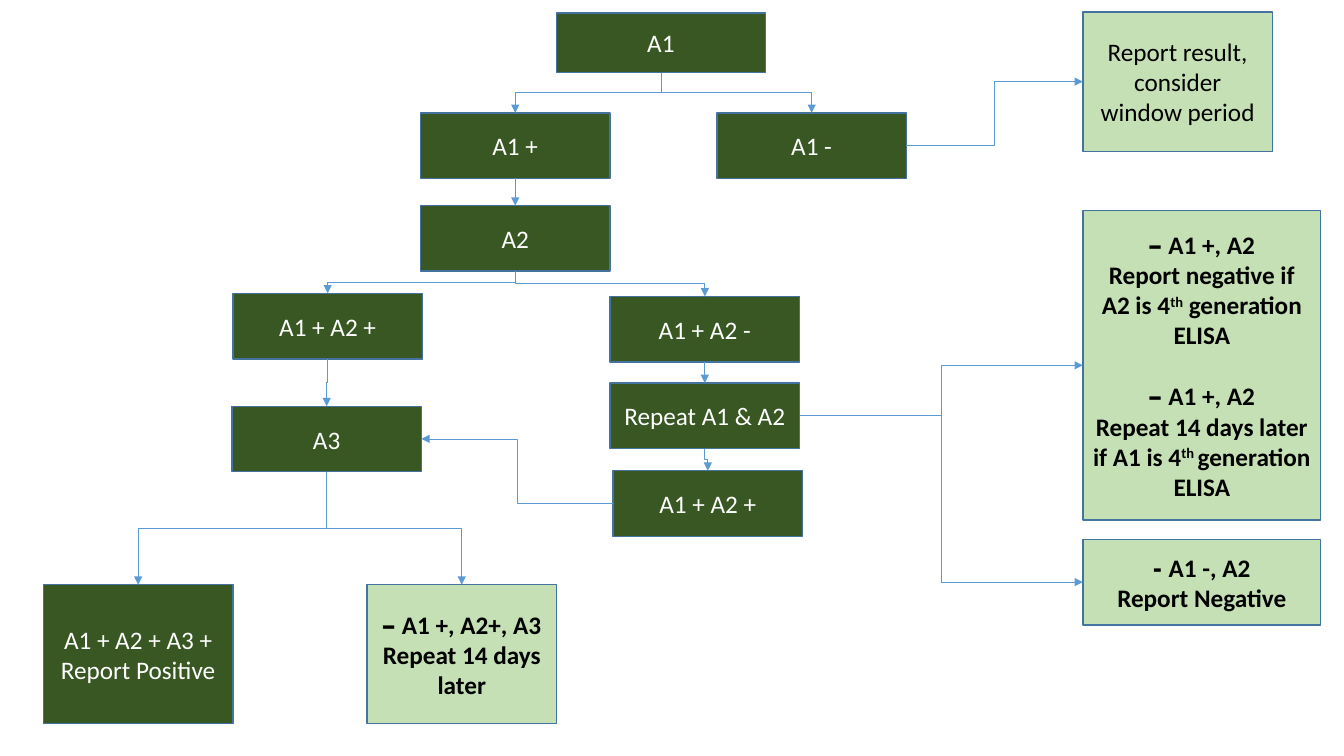
from pptx import Presentation
from pptx.dml.color import RGBColor
from pptx.enum.shapes import MSO_CONNECTOR, MSO_SHAPE
from pptx.enum.text import MSO_ANCHOR, PP_ALIGN
from pptx.oxml.ns import qn
from pptx.oxml.xmlchemy import OxmlElement
from pptx.util import Inches, Pt

PROCESS = MSO_SHAPE.FLOWCHART_PROCESS
ELBOW = MSO_CONNECTOR.ELBOW
MIDDLE = MSO_ANCHOR.MIDDLE
CENTER = PP_ALIGN.CENTER
TOP, LEFT, BOTTOM, RIGHT = range(4)  # connection sites of a box

COLORS = {
    "dark": "385723",
    "light": "C5E0B4",
    "outline": "43739E",
    "arrow": "5B9BD5",
    "white": "FFFFFF",
    "black": "000000",
}
STYLES = {
    "step": {"fill": "dark", "text": "white", "bold": False, "rtl": False},
    "advice": {"fill": "light", "text": "black", "bold": False, "rtl": False},
    "verdict": {"fill": "light", "text": "black", "bold": True, "rtl": True},
}
WIDTH, HEIGHT, TALL = 1.88, 0.65, 1.38
WIDE = 2.36
OUTCOME_LEFT = 10.74


def add_box(slide, left, top, width, height, style, paragraphs):
    """Add a process box; text between ^ marks is superscript."""
    look = STYLES[style]
    box = slide.shapes.add_shape(
        PROCESS, Inches(left), Inches(top), Inches(width), Inches(height))
    box.shadow.inherit = False
    box.fill.solid()
    box.fill.fore_color.rgb = RGBColor.from_string(COLORS[look["fill"]])
    box.line.color.rgb = RGBColor.from_string(COLORS["outline"])
    box.line.width = Pt(1)
    frame = box.text_frame
    frame.word_wrap = True
    frame.vertical_anchor = MIDDLE
    font_format = {"name": "Calibri", "size": Pt(18), "bold": look["bold"]}
    for index, text in enumerate(paragraphs):
        paragraph = frame.add_paragraph() if index else frame.paragraphs[0]
        paragraph.alignment = CENTER
        if look["rtl"]:
            paragraph._p.get_or_add_pPr().set("rtl", "1")
        for part, words in enumerate(text.split("^")):
            run = paragraph.add_run()
            run.text = words
            for name, value in font_format.items():
                setattr(run.font, name, value)
            run.font.color.rgb = RGBColor.from_string(COLORS[look["text"]])
            if part % 2:
                run.font._element.set("baseline", "30000")
    return box


def add_arrow(slide, start, start_site, end, end_site):
    """Join two boxes with a thin elbow arrow."""
    arrow = slide.shapes.add_connector(ELBOW, 0, 0, 0, 0)
    arrow.begin_connect(start, start_site)
    arrow.end_connect(end, end_site)
    if start_site == BOTTOM:
        # An elbow that leaves downwards is a horizontal one, turned
        across = arrow.end_x - arrow.begin_x
        down = arrow.end_y - arrow.begin_y
        middle_x = (arrow.begin_x + arrow.end_x) // 2
        middle_y = (arrow.begin_y + arrow.end_y) // 2
        arrow.width, arrow.height = down, abs(across)
        arrow.left = middle_x - down // 2
        arrow.top = middle_y - abs(across) // 2
        transform = arrow._element.spPr.find(qn("a:xfrm"))
        transform.set("rot", str((270 if across > 0 else 90) * 60000))
        transform.set("flipH", "1" if across > 0 else "0")
        transform.set("flipV", "0")
    arrow.line.color.rgb = RGBColor.from_string(COLORS["arrow"])
    arrow.line.width = Pt(0.5)
    head = OxmlElement("a:tailEnd")
    head.set("type", "triangle")
    arrow.line._get_or_add_ln().append(head)
    arrow._element.spPr.append(OxmlElement("a:effectLst"))


presentation = Presentation()
presentation.slide_width = Inches(13.33)
presentation.slide_height = Inches(7.5)
slide = presentation.slides.add_slide(presentation.slide_layouts[6])

# Boxes: left, top, width, height, style, paragraphs
box_table = {
    "a1": (5.52, 0.13, 2.07, 0.59, "step", ["A1"]),
    "a1_pos": (4.17, 1.12, WIDTH, HEIGHT, "step", ["A1 +"]),
    "a1_neg": (7.11, 1.12, WIDTH, HEIGHT, "step", ["A1 -"]),
    "a2": (4.17, 2.04, WIDTH, HEIGHT, "step", ["A2"]),
    "both_pos": (2.31, 2.91, WIDTH, HEIGHT, "step", ["A1 + A2 +"]),
    "discordant": (6.05, 2.94, WIDTH, HEIGHT, "step", ["A1 + A2 -"]),
    "repeat": (6.05, 3.8, WIDTH, HEIGHT, "step", ["Repeat A1 & A2"]),
    "repeat_pos": (6.08, 4.67, WIDTH, HEIGHT, "step", ["A1 + A2 +"]),
    "a3": (2.3, 4.03, WIDTH, HEIGHT, "step", ["A3"]),
    "positive": (0.43, 5.8, WIDTH, TALL, "step",
                 ["A1 + A2 + A3 +", "Report Positive"]),
    "retest": (3.64, 5.8, WIDTH, TALL, "verdict",
               ["A1 +, A2+, A3 –", "Repeat 14 days later"]),
    "window": (OUTCOME_LEFT, 0.12, WIDTH, TALL, "advice",
               ["Report result, consider window period"]),
    "generation": (OUTCOME_LEFT, 2.09, WIDE, 3.07, "verdict",
                   ["A1 +, A2 –",
                    "Report negative if A2 is 4^th^ generation ELISA",
                    "A1 +, A2 –",
                    "Repeat 14 days later if A1 is 4^th ^generation ELISA"]),
    "negative": (OUTCOME_LEFT, 5.35, WIDE, 0.85, "verdict",
                 ["A1 -, A2 -", "Report Negative"]),
}
boxes = {name: add_box(slide, *values) for name, values in box_table.items()}

# Gap of one line between the two generation rules
boxes["generation"].text_frame.paragraphs[2].space_before = Pt(22)

# Wider gaps between the test results
for name, gap in {"both_pos": " ", "discordant": " ",
                  "repeat_pos": " ", "positive": " "}.items():
    run = boxes[name].text_frame.paragraphs[0].runs[0]
    run.text = run.text.replace(" A", gap + "A")

# Arrows down the tree
for start, end in [
    ("a1", "a1_neg"), ("a1", "a1_pos"), ("a1_pos", "a2"),
    ("a2", "discordant"), ("a2", "both_pos"), ("discordant", "repeat"),
    ("both_pos", "a3"), ("repeat", "repeat_pos"),
    ("a3", "positive"), ("a3", "retest"),
]:
    add_arrow(slide, boxes[start], BOTTOM, boxes[end], TOP)

# Arrows to the outcomes on the right, and back to A3
for start, end in [("a1_neg", "window"), ("repeat", "generation"),
                   ("repeat", "negative")]:
    add_arrow(slide, boxes[start], RIGHT, boxes[end], LEFT)
add_arrow(slide, boxes["repeat_pos"], LEFT, boxes["a3"], RIGHT)

presentation.save("out.pptx")
